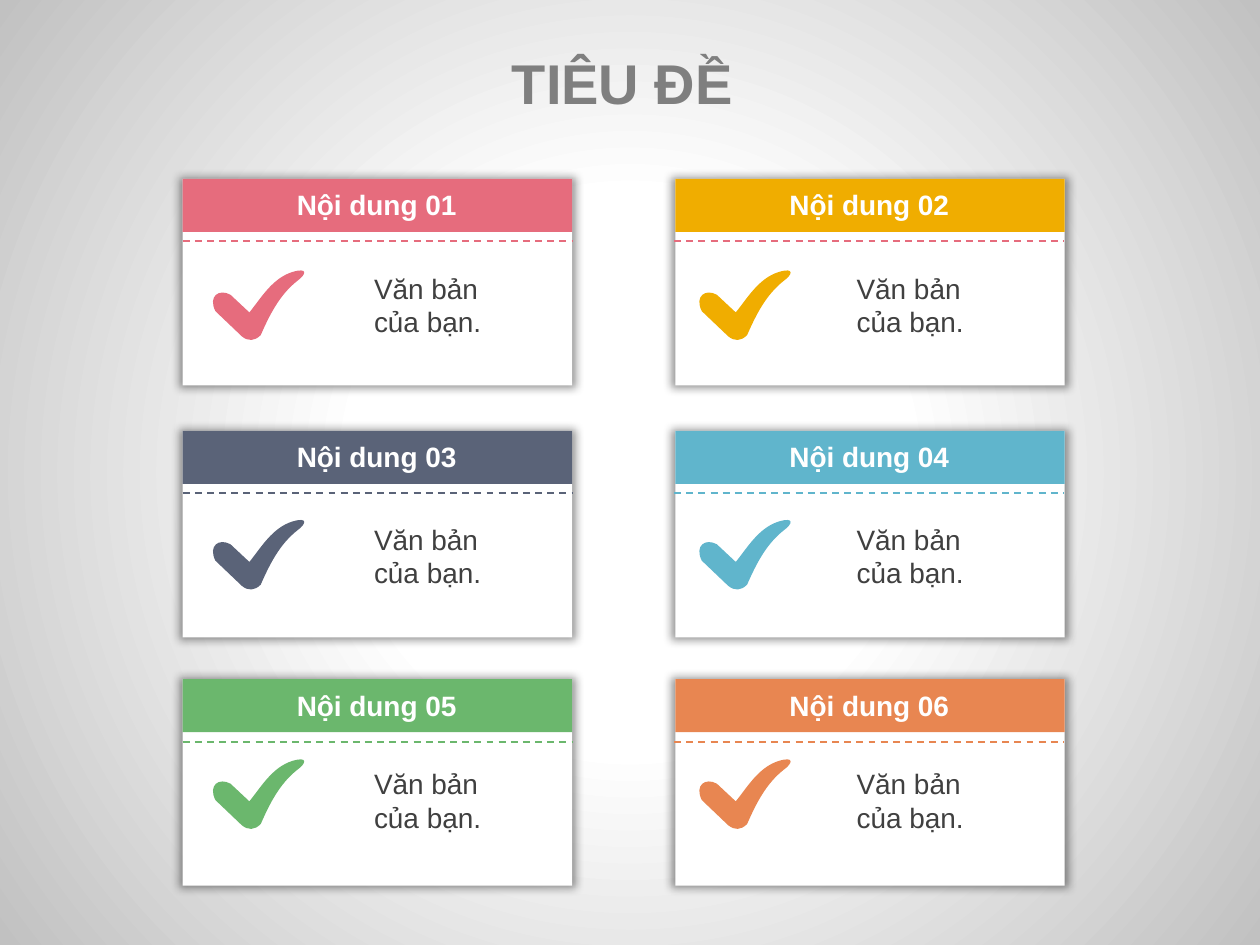
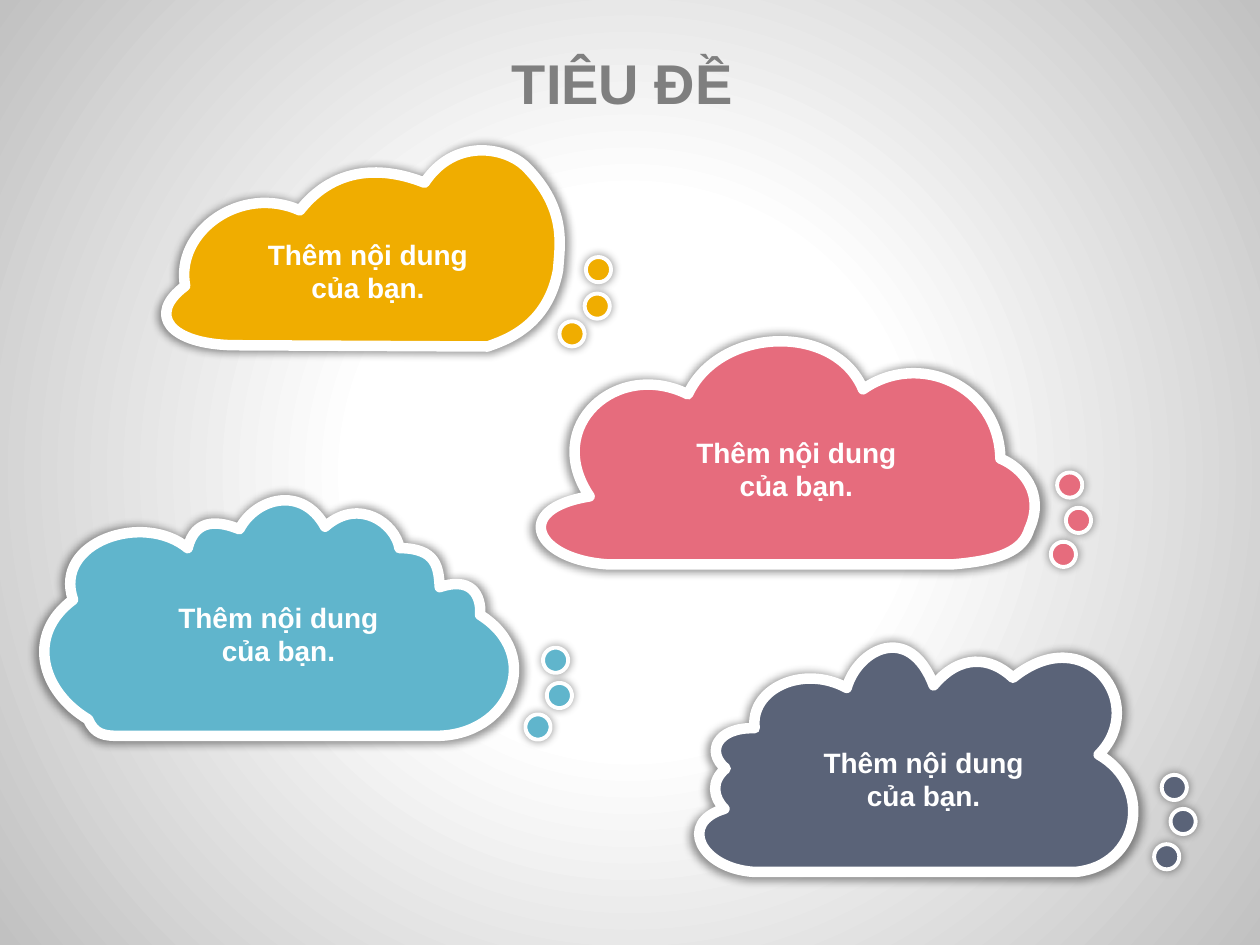
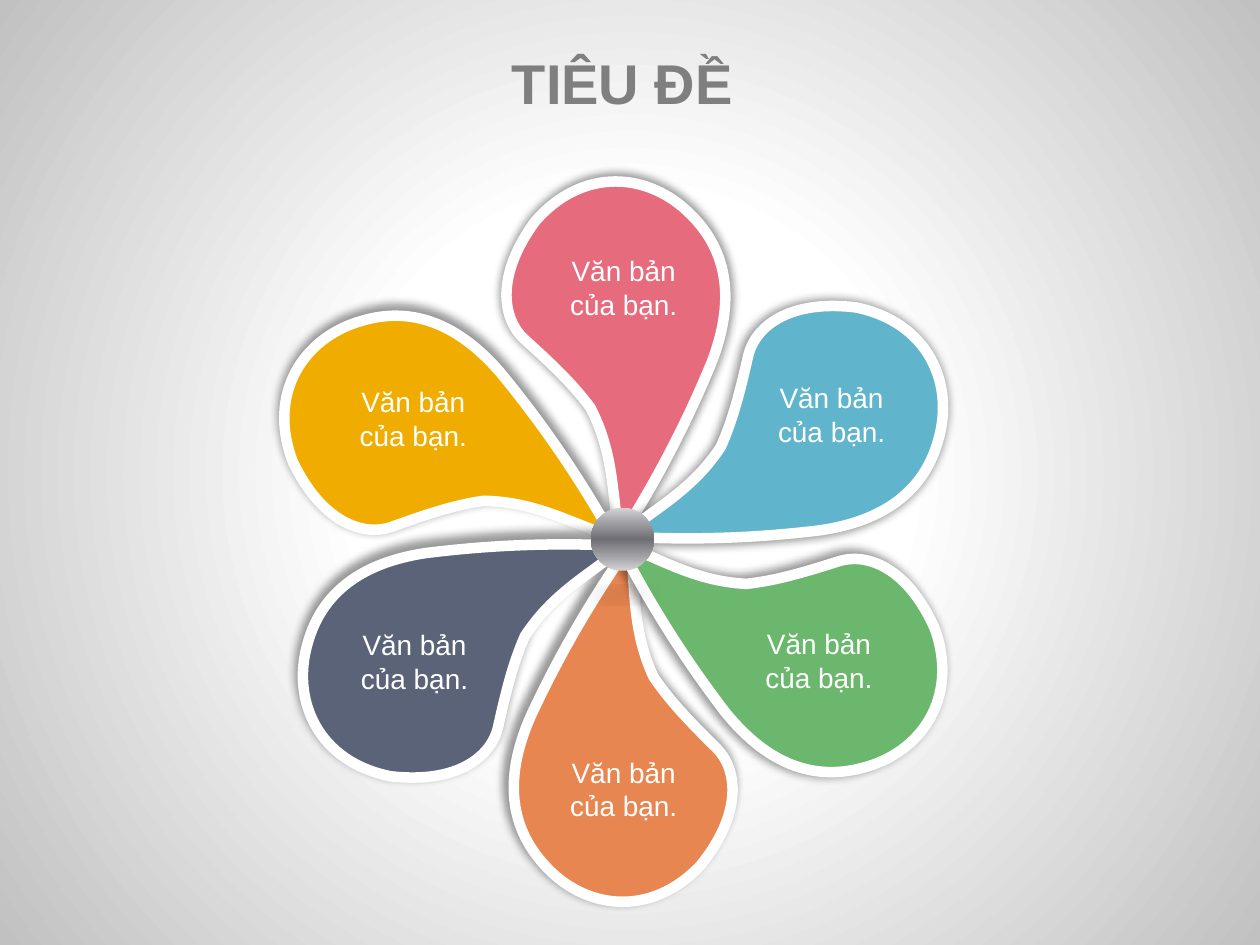
from typing import NamedTuple

from lxml.etree import SubElement
from pptx import Presentation
from pptx.dml.color import RGBColor
from pptx.enum.dml import MSO_LINE
from pptx.enum.shapes import MSO_CONNECTOR, MSO_SHAPE
from pptx.enum.text import MSO_ANCHOR, MSO_AUTO_SIZE, PP_ALIGN
from pptx.oxml import parse_xml
from pptx.oxml.ns import nsdecls, qn
from pptx.util import Inches, Pt

FONT = "Arial"
WHITE = RGBColor(0xFF, 0xFF, 0xFF)
TITLE_GRAY = RGBColor(0x7F, 0x7F, 0x7F)
BODY_GRAY = RGBColor(0x40, 0x40, 0x40)
EDGE_GRAY = RGBColor(0xC1, 0xC1, 0xC1)
PINK = RGBColor(0xE6, 0x6C, 0x7D)
AMBER = RGBColor(0xF0, 0xAD, 0x00)
SLATE = RGBColor(0x5A, 0x63, 0x78)
BLUE = RGBColor(0x60, 0xB5, 0xCC)
GREEN = RGBColor(0x6B, 0xB7, 0x6D)
ORANGE = RGBColor(0xE8, 0x86, 0x51)
HUB_LIGHT = RGBColor(0xD4, 0xD4, 0xD6)
HUB_MID = RGBColor(0x9D, 0x9D, 0xA2)
HUB_DARK = RGBColor(0x6E, 0x6E, 0x74)

TITLE = "TIÊU ĐỀ"
YOUR_TEXT = "Văn bản của bạn."
ADD_CONTENT = "Thêm nội dung của bạn."
CURVE_STEPS = 24

# An outline starts at its first point; then pairs are lines and sextets are cubic curves.
Outline = list[tuple[float, ...]]
Point = tuple[float, float]


class Shadow(NamedTuple):
    opacity: int
    blur: float
    distance: float
    angle: int
    scale_x: int
    scale_y: int
    anchor: str


class Column(NamedTuple):
    card: float
    dash: float
    check: float
    body: float


class Row(NamedTuple):
    card: float
    dash: float
    check: float
    body: float


class Card(NamedTuple):
    color: RGBColor
    dash_color: RGBColor


class Cloud(NamedTuple):
    color: RGBColor
    outline: Outline
    label: Point
    dots: list[Point]
    dot_rotation: float


class Petal(NamedTuple):
    color: RGBColor
    corner: Point
    rotation: float
    label: Point


GLOW = Shadow(40, 5, 0, 0, 102, 102, "ctr")
HUB_SHADOW = Shadow(15, 12, 10, 90, 90, -19, "bl")

COLUMNS = [Column(1.45, 1.45, 1.69, 2.87), Column(5.36, 5.35, 5.55, 6.7)]
ROWS = [Row(1.42, 1.91, 2.15, 2.1), Row(3.42, 3.91, 4.13, 4.09), Row(5.39, 5.89, 6.03, 6.03)]
CARDS = [
    Card(PINK, PINK), Card(AMBER, PINK),
    Card(SLATE, SLATE), Card(BLUE, BLUE),
    Card(GREEN, GREEN), Card(ORANGE, ORANGE),
]
CARD_WIDTH = 3.09

CHECK_OUTLINE: Outline = [
    (0.29, 0.33), (0.14, 0.19), (0.05, 0.14, -0.04, 0.2, 0.02, 0.32), (0.23, 0.52),
    (0.28, 0.56, 0.33, 0.56, 0.38, 0.51), (0.45, 0.35, 0.53, 0.19, 0.67, 0.08),
    (0.74, 0.03, 0.76, -0.03, 0.63, 0.01), (0.47, 0.06, 0.38, 0.22, 0.29, 0.33),
]

CLOUDS = [
    Cloud(AMBER, [
        (1.85, 2.74), (3.87, 2.75), (4.01, 2.7, 4.35, 2.59, 4.43, 2.14),
        (4.44, 1.96, 4.51, 1.66, 4.17, 1.32), (4, 1.16, 3.6, 1.1, 3.37, 1.45),
        (2.99, 1.3, 2.63, 1.35, 2.38, 1.67), (1.91, 1.46, 1.39, 1.84, 1.47, 2.27),
        (1.16, 2.5, 1.35, 2.73, 1.85, 2.74),
    ], (1.98, 1.83), [(4.44, 2.55), (4.64, 2.33), (4.65, 2.04)], 0),
    Cloud(PINK, [
        (4.84, 4.48), (7.55, 4.48), (7.94, 4.45, 8.12, 4.37, 8.17, 4.2),
        (8.3, 3.91, 8.11, 3.71, 7.94, 3.64), (7.93, 3.06, 7.29, 2.78, 6.85, 3.09),
        (6.63, 2.56, 5.71, 2.59, 5.46, 3.13), (4.9, 2.85, 4.3, 3.38, 4.68, 3.94),
        (4.05, 4.04, 4.25, 4.45, 4.84, 4.48),
    ], (5.38, 3.4), [(8.34, 4.3), (8.46, 4.03), (8.39, 3.75)], 343.7),
    Cloud(BLUE, [
        (0.94, 5.84), (3.46, 5.84), (4.05, 5.84, 4.32, 5.2, 3.81, 4.88),
        (3.82, 4.79, 3.79, 4.56, 3.49, 4.66), (3.48, 4.51, 3.47, 4.35, 3.17, 4.35),
        (3.14, 4.16, 2.85, 3.94, 2.58, 4.18), (2.4, 3.85, 2.03, 3.95, 1.9, 4.2),
        (1.75, 4.14, 1.55, 4.1, 1.49, 4.35), (1.14, 4.06, 0.42, 4.3, 0.58, 4.76),
        (0.2, 5.04, 0.33, 5.49, 0.7, 5.71), (0.75, 5.83, 0.83, 5.84, 0.94, 5.84),
    ], (1.27, 4.71), [(4.17, 5.67), (4.34, 5.42), (4.31, 5.14)], 352.7),
    Cloud(SLATE, [
        (5.98, 6.92), (8.54, 6.92), (9.05, 6.87, 9.16, 6.24, 8.72, 5.99),
        (9.12, 5.59, 8.62, 4.91, 8.04, 5.38), (7.86, 5.21, 7.62, 5.19, 7.41, 5.44),
        (7.22, 4.94, 6.81, 5.15, 6.72, 5.46), (6.37, 5.27, 5.95, 5.47, 5.99, 5.78),
        (5.69, 5.77, 5.6, 5.97, 5.76, 6.1), (5.64, 6.2, 5.66, 6.33, 5.75, 6.42),
        (5.38, 6.53, 5.56, 6.89, 5.98, 6.92),
    ], (6.39, 5.86), [(9.16, 6.7), (9.29, 6.42), (9.22, 6.15)], 343.7),
]

PETAL_OUTLINE: Outline = [
    (4.92, 4.28), (4.86, 3.94, 4.88, 3.61, 4.69, 3.24), (4.55, 3.05, 4.38, 2.89, 4.17, 2.7),
    (3.98, 2.53, 3.94, 2.18, 4.25, 1.76), (4.63, 1.32, 5.16, 1.37, 5.49, 1.71),
    (5.78, 2, 5.84, 2.39, 5.65, 2.88), (5.44, 3.39, 5.2, 3.84, 4.92, 4.28),
]
PETALS = [
    Petal(PINK, (4.02, 1.44), 0, (4.26, 1.96)),
    Petal(ORANGE, (4.1, 4.32), 182.5, (4.26, 5.94)),
    Petal(BLUE, (5.28, 2.12), 60.7, (5.91, 2.97)),
    Petal(GREEN, (5.28, 3.58), 120.2, (5.81, 4.92)),
    Petal(AMBER, (2.73, 2.2), 298.1, (2.59, 3)),
    Petal(SLATE, (2.87, 3.64), 240.4, (2.6, 4.93)),
]
HUB_STOPS = [(0, HUB_LIGHT), (25, HUB_MID), (50, HUB_DARK), (75, HUB_MID), (100, HUB_LIGHT)]


def replace_with_gradient(solid_fill, stops: list[tuple[int, RGBColor]], direction: str) -> None:
    stop_xml = "".join(
        f'<a:gs pos="{position * 1000}"><a:srgbClr val="{color}"/></a:gs>'
        for position, color in stops
    )
    gradient = parse_xml(
        f'<a:gradFill {nsdecls("a")} rotWithShape="1">'
        f"<a:gsLst>{stop_xml}</a:gsLst>{direction}</a:gradFill>"
    )
    solid_fill.getparent().replace(solid_fill, gradient)


def set_background(master) -> None:
    master.background.fill.solid()
    solid_fill = master.element.xpath("p:cSld/p:bg/p:bgPr/a:solidFill")[0]
    center = '<a:fillToRect l="50000" t="50000" r="50000" b="50000"/>'
    replace_with_gradient(
        solid_fill, [(35, WHITE), (100, EDGE_GRAY)], f'<a:path path="circle">{center}</a:path>'
    )


def paint(shape, fill: RGBColor, border: float = 0, shadow: Shadow | None = None) -> None:
    """Fill a shape and give it a white border and a soft shadow where wanted."""
    shape.fill.solid()
    shape.fill.fore_color.rgb = fill
    if border:
        shape.line.color.rgb = WHITE
        shape.line.width = Pt(border)
    else:
        shape.line.fill.background()
    shape.shadow.inherit = False
    if shadow:
        effects = shape.element.spPr.find(qn("a:effectLst"))
        effects.append(parse_xml(
            f'<a:outerShdw {nsdecls("a")} blurRad="{Pt(shadow.blur)}" '
            f'dist="{Pt(shadow.distance)}" dir="{shadow.angle * 60000}" '
            f'sx="{shadow.scale_x * 1000}" sy="{shadow.scale_y * 1000}" '
            f'algn="{shadow.anchor}" rotWithShape="0"><a:srgbClr val="000000">'
            f'<a:alpha val="{shadow.opacity * 1000}"/></a:srgbClr></a:outerShdw>'
        ))


def add_preset(shapes, preset: MSO_SHAPE, left: float, top: float, width: float, height: float):
    return shapes.add_shape(preset, Inches(left), Inches(top), Inches(width), Inches(height))


def flatten(outline: Outline) -> list[Point]:
    """Sample an outline of lines and cubic curves, so that its extent is known."""
    points = [outline[0]]
    for segment in outline[1:]:
        if len(segment) == 2:
            points.append(segment)
            continue
        x0, y0 = points[-1]
        x1, y1, x2, y2, x3, y3 = segment
        for step in range(1, CURVE_STEPS + 1):
            t = step / CURVE_STEPS
            a, b, c, d = (1 - t) ** 3, 3 * t * (1 - t) ** 2, 3 * t * t * (1 - t), t ** 3
            points.append((a * x0 + b * x1 + c * x2 + d * x3, a * y0 + b * y1 + c * y2 + d * y3))
    return points


def add_outline(slide, outline: Outline, offset: Point = (0, 0)):
    """Add a freeform of the outline's extent and draw its lines and true curves in it."""
    dx, dy = offset
    start, *rest = [(Inches(x + dx), Inches(y + dy)) for x, y in flatten(outline)]
    builder = slide.shapes.build_freeform(*start)
    builder.add_line_segments(rest, close=True)
    shape = builder.convert_to_shape()

    contour = shape.element.spPr.find(f".//{qn('a:path')}")
    for step in list(contour):
        contour.remove(step)
    for index, segment in enumerate(outline):
        tag = "a:moveTo" if index == 0 else "a:lnTo" if len(segment) == 2 else "a:cubicBezTo"
        command = SubElement(contour, qn(tag))
        for x, y in zip(segment[::2], segment[1::2]):
            SubElement(command, qn("a:pt"), x=str(Inches(x + dx) - shape.left),
                       y=str(Inches(y + dy) - shape.top))
    SubElement(contour, qn("a:close"))
    return shape


def write(frame, text: str, size: int, color: RGBColor, bold: bool, align: PP_ALIGN) -> None:
    frame.text = text
    frame.vertical_anchor = MSO_ANCHOR.MIDDLE
    frame.auto_size = MSO_AUTO_SIZE.SHAPE_TO_FIT_TEXT
    paragraph = frame.paragraphs[0]
    paragraph.alignment = align
    font = paragraph.runs[0].font
    font.name, font.size, font.bold = FONT, Pt(size), bold
    font.color.rgb = color


def add_label(slide, text: str, corner: Point, width: float, height: float = 0.64,
              color: RGBColor = WHITE, bold: bool = False,
              align: PP_ALIGN = PP_ALIGN.CENTER) -> None:
    left, top = corner
    box = slide.shapes.add_textbox(Inches(left), Inches(top), Inches(width), Inches(height))
    box.text_frame.word_wrap = True
    write(box.text_frame, text, 16, color, bold, align)


def add_titled_slide(prs):
    slide = prs.slides.add_slide(prs.slide_layouts[5])
    title = slide.shapes.title
    title.left, title.top = Inches(0.82), Inches(0.33)
    title.width, title.height = Inches(8.24), Inches(0.64)
    title.text_frame.word_wrap = False
    write(title.text_frame, TITLE, 32, TITLE_GRAY, True, PP_ALIGN.CENTER)
    return slide


def add_dashed_rule(shapes, left: float, top: float, color: RGBColor) -> None:
    rule = shapes.add_connector(
        MSO_CONNECTOR.STRAIGHT, Inches(left), Inches(top), Inches(left + CARD_WIDTH), Inches(top)
    )
    rule.line.color.rgb = color
    rule.line.width = Pt(1)
    rule.line.dash_style = MSO_LINE.DASH
    SubElement(rule.element.spPr, qn("a:effectLst"))


def add_card(slide, card: Card, column: Column, row: Row) -> None:
    parts = slide.shapes.add_group_shape().shapes
    panel = add_preset(parts, MSO_SHAPE.RECTANGLE, column.card, row.card, CARD_WIDTH, 1.64)
    paint(panel, WHITE, shadow=GLOW)
    header = add_preset(parts, MSO_SHAPE.RECTANGLE, column.card, row.card, CARD_WIDTH, 0.42)
    paint(header, card.color)
    add_dashed_rule(parts, column.dash, row.dash, card.dash_color)


def build_cards(prs) -> None:
    slide = add_titled_slide(prs)
    cells = [(column, row) for row in ROWS for column in COLUMNS]
    for card, (column, row) in zip(CARDS, cells):
        add_card(slide, card, column, row)
    for card, (column, row) in zip(CARDS, cells):
        paint(add_outline(slide, CHECK_OUTLINE, (column.check, row.check)), card.color)
    for column, row in cells:
        add_label(slide, YOUR_TEXT, (column.body, row.body), 1.38,
                  color=BODY_GRAY, align=PP_ALIGN.LEFT)
    for number, (column, row) in enumerate(cells, 1):
        add_label(slide, f"Nội dung {number:02}", (column.card + 0.54, row.card + 0.02),
                  2, 0.37, bold=True)


def build_clouds(prs) -> None:
    slide = add_titled_slide(prs)
    for cloud in CLOUDS:
        paint(add_outline(slide, cloud.outline), cloud.color, 6, GLOW)
    for cloud in CLOUDS:
        dots = slide.shapes.add_group_shape().shapes
        for left, top in cloud.dots:
            dot = add_preset(dots, MSO_SHAPE.OVAL, left, top, 0.2, 0.2)
            dot.rotation = cloud.dot_rotation
            paint(dot, cloud.color, 2.25, GLOW)
    for cloud in CLOUDS:
        add_label(slide, ADD_CONTENT, cloud.label, 1.88, bold=True)


def build_flower(prs) -> None:
    slide = add_titled_slide(prs)
    for petal in PETALS:
        leaf = add_outline(slide, PETAL_OUTLINE)
        leaf.left, leaf.top = (Inches(edge) for edge in petal.corner)
        leaf.rotation = petal.rotation
        paint(leaf, petal.color, 6, GLOW)

    hub = add_preset(slide.shapes, MSO_SHAPE.OVAL, 4.69, 4.03, 0.5, 0.5)
    paint(hub, HUB_MID, shadow=HUB_SHADOW)
    solid_fill = hub.element.spPr.find(qn("a:solidFill"))
    replace_with_gradient(solid_fill, HUB_STOPS, '<a:lin ang="5400000" scaled="0"/>')

    for petal in PETALS:
        add_label(slide, YOUR_TEXT, petal.label, 1.38)


def main() -> None:
    prs = Presentation()
    prs.slide_width, prs.slide_height = Inches(10), Inches(7.5)
    set_background(prs.slide_master)
    build_cards(prs)
    build_clouds(prs)
    build_flower(prs)
    prs.save("out.pptx")


if __name__ == "__main__":
    main()
